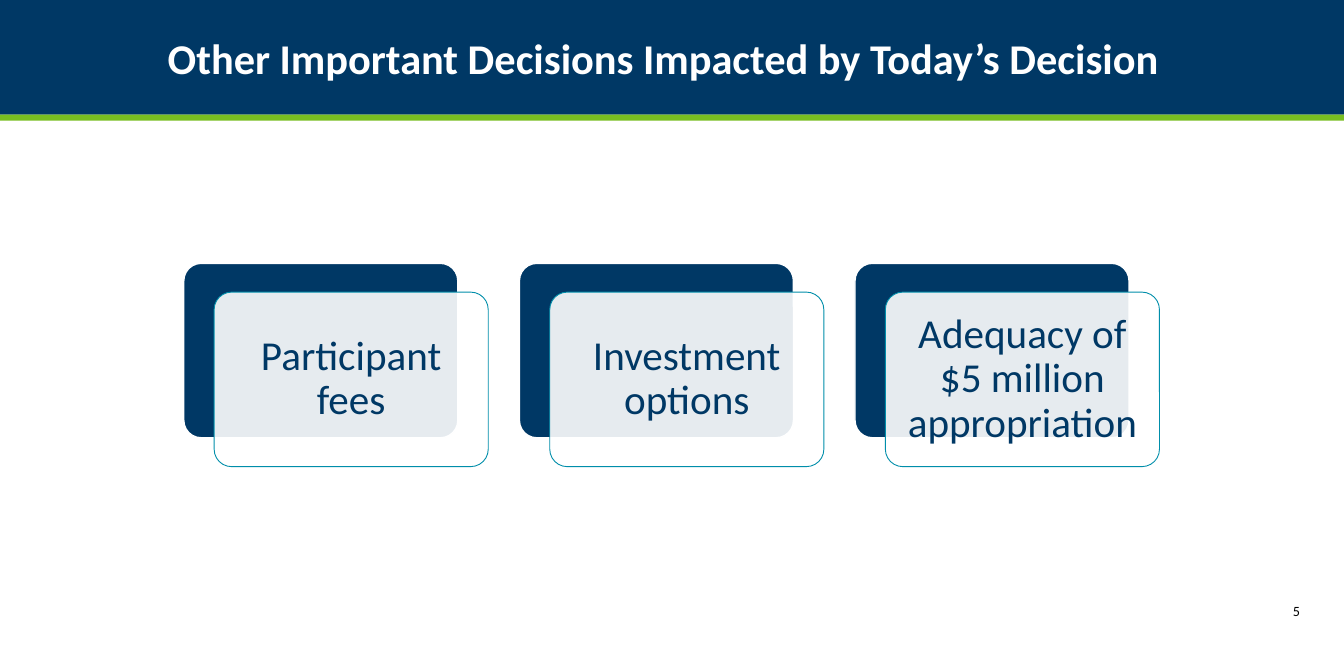
from lxml.etree import SubElement
from pptx import Presentation
from pptx.dml.color import RGBColor
from pptx.enum.shapes import MSO_SHAPE
from pptx.enum.text import MSO_ANCHOR, PP_ALIGN
from pptx.oxml.ns import qn
from pptx.util import Pt

PX = 9144  # EMU per px, 100 px to the inch
COLORS = {
    "navy": "003865",
    "green": "78BE21",
    "teal": "008EAA",
    "white": "FFFFFF",
    "black": "000000",
}
FONT = "Calibri"


def color(name):
    return RGBColor.from_string(COLORS[name])


class DecisionSlide:
    def __init__(self, width, height):
        self.deck = Presentation()
        self.deck.slide_width = width * PX
        self.deck.slide_height = height * PX
        self.page = self.deck.slides.add_slide(self.deck.slide_layouts[6])

    def box(self, kind, bounds, fill, line=None, line_width=0):
        shape = self.page.shapes.add_shape(kind, *(n * PX for n in bounds))
        shape.shadow.inherit = False
        shape.fill.solid()
        shape.fill.fore_color.rgb = color(fill)
        if line:
            shape.line.color.rgb = color(line)
            shape.line.width = Pt(line_width)
        else:
            shape.line.fill.background()
        return shape

    def band(self, bounds, fill):
        return self.box(MSO_SHAPE.RECTANGLE, bounds, fill)

    def card(self, bounds, fill, line, line_width, opacity=100):
        shape = self.box(MSO_SHAPE.ROUNDED_RECTANGLE, bounds, fill, line, line_width)
        shape.adjustments[0] = 0.1
        if opacity < 100:
            properties = shape.element.spPr
            fill_color = properties.find(qn("a:solidFill"))[0]
            SubElement(fill_color, qn("a:alpha"), val=str(opacity * 1000))
        return shape

    def set_text(self, shape, text, size, ink, align, insets, bold=False, spacing=0.9):
        frame = shape.text_frame
        frame.word_wrap = True
        frame.vertical_anchor = MSO_ANCHOR.MIDDLE
        frame.margin_left = frame.margin_right = insets[0] * PX
        frame.margin_top = frame.margin_bottom = insets[1] * PX
        para = frame.paragraphs[0]
        para.text = text
        para.alignment = align
        para.line_spacing = spacing
        para.font.name = FONT
        para.font.size = Pt(size)
        para.font.bold = bold
        para.font.color.rgb = color(ink)

    def label(self, bounds, *args, **style):
        shape = self.page.shapes.add_textbox(*(n * PX for n in bounds))
        self.set_text(shape, *args, **style)


def main():
    slide = DecisionSlide(1770, 850)

    # Header
    slide.band((0, 0, 1770, 151), "navy")
    slide.band((0, 151, 1770, 8), "green")
    slide.label((198, 6, 1329, 149),
                "Other Important Decisions Impacted by Today’s Decision",
                40.2, "white", PP_ALIGN.RIGHT, (0, 20), bold=True)

    # Page number
    slide.label((1543, 782, 179, 45), "5", 13.4, "black", PP_ALIGN.RIGHT,
                (10, 5), spacing=1.0)

    # Decision cards, each a solid back with an offset front
    left, top, width, height, pitch = 242, 347, 361, 230, 442
    decisions = ("Participant fees", "Investment options",
                 "Adequacy of $5 million appropriation")
    for index, decision in enumerate(decisions):
        x = left + index * pitch
        slide.card((x, top, width, height), "navy", "white", 1.35)
        front = slide.card((x + 40, top + 38, width, height),
                           "white", "teal", 0.85, opacity=90)
        slide.set_text(front, decision, 39, "navy", PP_ALIGN.CENTER, (16, 16))

    slide.deck.save("out.pptx")


if __name__ == "__main__":
    main()
